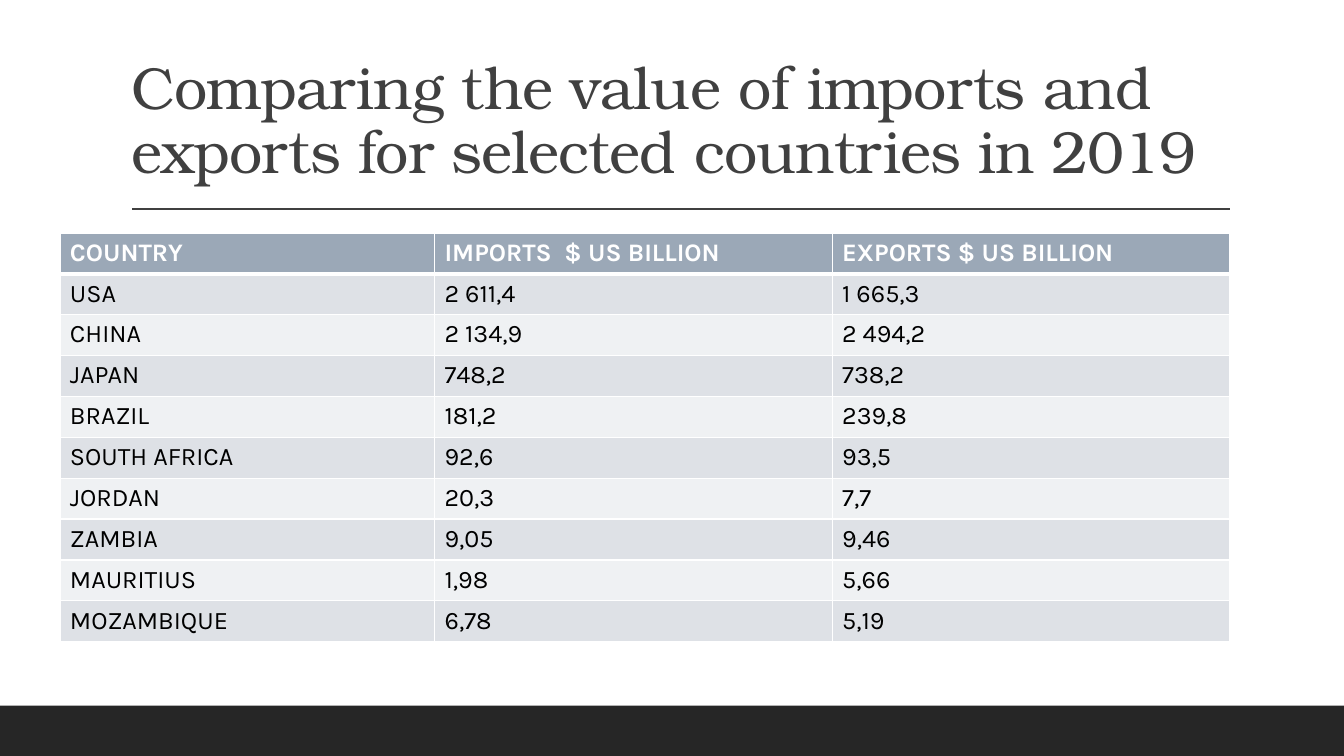
import pptx
import pptx.util
import pptx.dml.color
import pptx.enum.shapes
import pptx.enum.text
import pptx.oxml
import pptx.oxml.ns
from pptx.util import Cm, Pt

RGBColor = pptx.dml.color.RGBColor
WHITE = RGBColor(0xFF, 0xFF, 0xFF)
BLACK = RGBColor(0x00, 0x00, 0x00)
DARK = RGBColor(0x26, 0x26, 0x26)
GREY = RGBColor(0x40, 0x40, 0x40)
HEADER = RGBColor(0x9B, 0xA8, 0xB7)
BANDS = (RGBColor(0xDE, 0xE1, 0xE6), RGBColor(0xEF, 0xF1, 0xF3))

TITLE = "Comparing the value of imports and exports for selected countries in 2019"
ROWS = [
    ("COUNTRY", "IMPORTS  $ US BILLION", "EXPORTS $ US BILLION"),
    ("USA", "2 611,4", "1 665,3"),
    ("CHINA", "2 134,9", "2 494,2"),
    ("JAPAN", "748,2", "738,2"),
    ("BRAZIL", "181,2", "239,8"),
    ("SOUTH AFRICA", "92,6", "93,5"),
    ("JORDAN", "20,3", "7,7"),
    ("ZAMBIA", "9,05", "9,46"),
    ("MAURITIUS", "1,98", "5,66"),
    ("MOZAMBIQUE", "6,78", "5,19"),
]


class Deck:
    """Slide style and one method per kind of element."""

    title_font = {"name": "TeX Gyre Bonum", "size": Pt(42.3), "bold": False}
    table_font = {"name": "Karla", "size": Pt(18)}

    def __init__(self, prs):
        self.s = prs.slides.add_slide(prs.slide_layouts[5])

    def add_text(self, tf, text, color, **font):
        p = tf.paragraphs[0]
        r = p.add_run()
        r.text = text
        r.font.color.rgb = color
        for name, value in font.items():
            setattr(r.font, name, value)
        return p, r

    def bar(self, left, top, width, height, color):
        sp = self.s.shapes.add_shape(
            pptx.enum.shapes.MSO_SHAPE.RECTANGLE, left, top, width, height)
        sp.shadow.inherit = False
        sp.fill.solid()
        sp.fill.fore_color.rgb = color
        sp.line.fill.background()

    def rule(self, left, right, y, color):
        cx = self.s.shapes.add_connector(
            pptx.enum.shapes.MSO_CONNECTOR.STRAIGHT, left, y, right, y)
        cx.line.color.rgb = color
        cx.line.width = Pt(1)
        cx._element.spPr.append(pptx.oxml.parse_xml(
            f"<a:effectLst {pptx.oxml.ns.nsdecls('a')}/>"))

    def title(self, text, left, top, width, height):
        sp = self.s.shapes.title
        sp.left, sp.top, sp.width, sp.height = left, top, width, height
        tf = sp.text_frame
        tf.word_wrap = True
        tf.auto_size = pptx.enum.text.MSO_AUTO_SIZE.NONE
        tf.vertical_anchor = pptx.enum.text.MSO_ANCHOR.BOTTOM
        p, r = self.add_text(tf, text, GREY, **self.title_font)
        p.alignment = pptx.enum.text.PP_ALIGN.LEFT
        p.line_spacing = 0.9
        r._r.get_or_add_rPr().set("spc", "-50")

    def borders(self, cell, top, bottom):
        tcPr = cell._tc.get_or_add_tcPr()
        sides = {"L": 1, "R": 1, "T": top, "B": bottom}
        for i, (side, width) in enumerate(sides.items()):
            tcPr.insert(i, pptx.oxml.parse_xml(
                f'<a:ln{side} {pptx.oxml.ns.nsdecls("a")} w="{Pt(width)}">'
                f'<a:solidFill><a:srgbClr val="{WHITE}"/></a:solidFill>'
                f'</a:ln{side}>'))

    def table(self, rows, left, top, widths, row_height):
        table = self.s.shapes.add_table(
            len(rows), len(widths), left, top,
            sum(widths), row_height * len(rows)).table
        for column, width in zip(table.columns, widths):
            column.width = width
        for i, row in enumerate(rows):
            table.rows[i].height = row_height
            head = i == 0
            for j, text in enumerate(row):
                cell = table.cell(i, j)
                cell.fill.solid()
                cell.fill.fore_color.rgb = HEADER if head else BANDS[(i - 1) % 2]
                # A thick line parts the header from the body
                self.borders(cell, 3 if i == 1 else 1, 3 if head else 1)
                self.add_text(cell.text_frame, text, WHITE if head else BLACK,
                              bold=head, **self.table_font)


def main():
    prs = pptx.Presentation()
    prs.slide_width, prs.slide_height = Cm(33.87), Cm(19.05)
    deck = Deck(prs)

    # Footer band and title rule
    deck.bar(0, Cm(17.78), prs.slide_width, Cm(1.27), DARK)
    deck.rule(Cm(3.33), Cm(31), Cm(5.27), GREY)

    # Title
    deck.title(TITLE, Cm(3.06), Cm(0.79), Cm(27.94), Cm(4.03))

    # Trade table
    deck.table(ROWS, Cm(1.51), Cm(5.87), (Cm(9.44), Cm(10.02), Cm(10.02)), Cm(1.03))

    prs.save("out.pptx")


if __name__ == "__main__":
    main()
